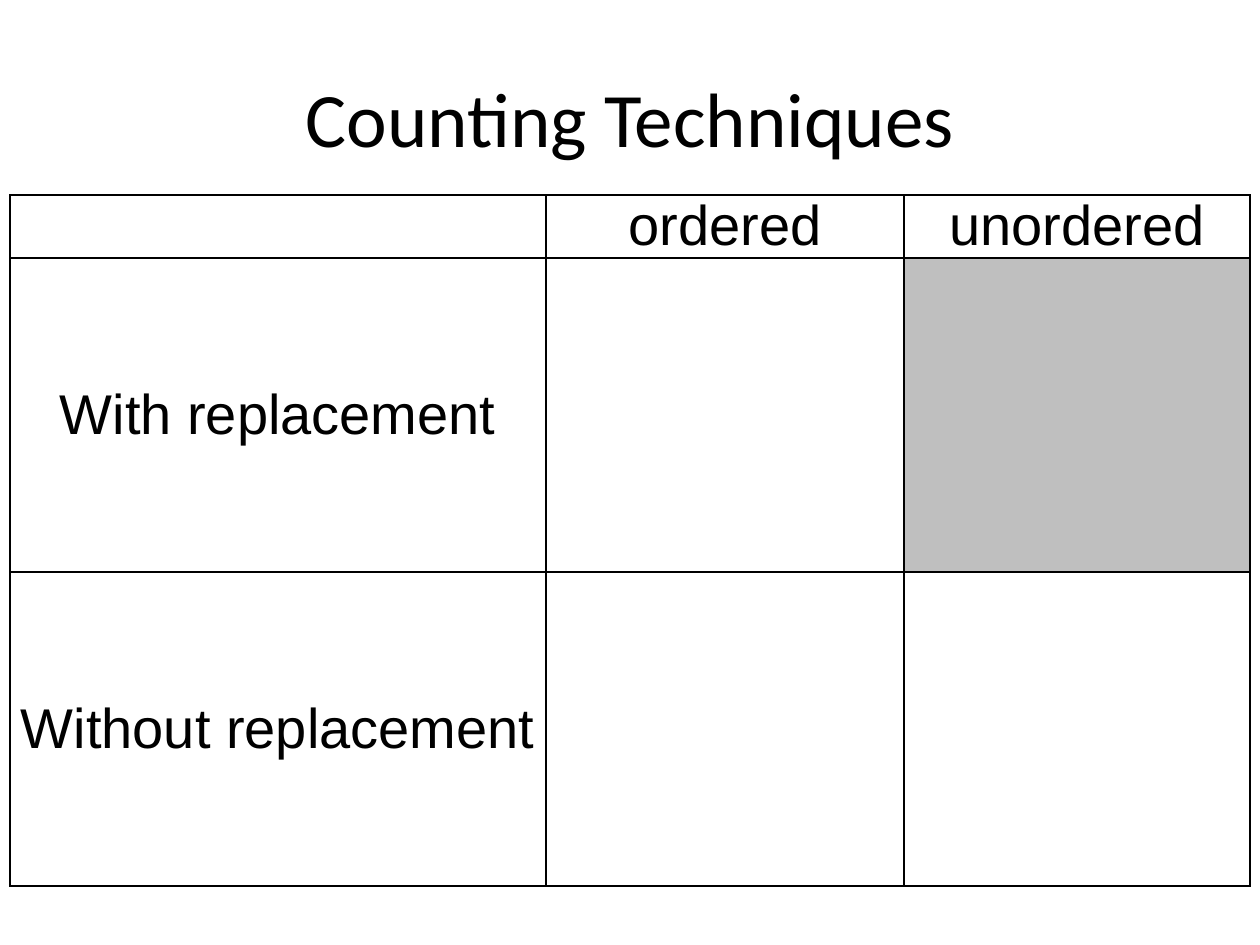
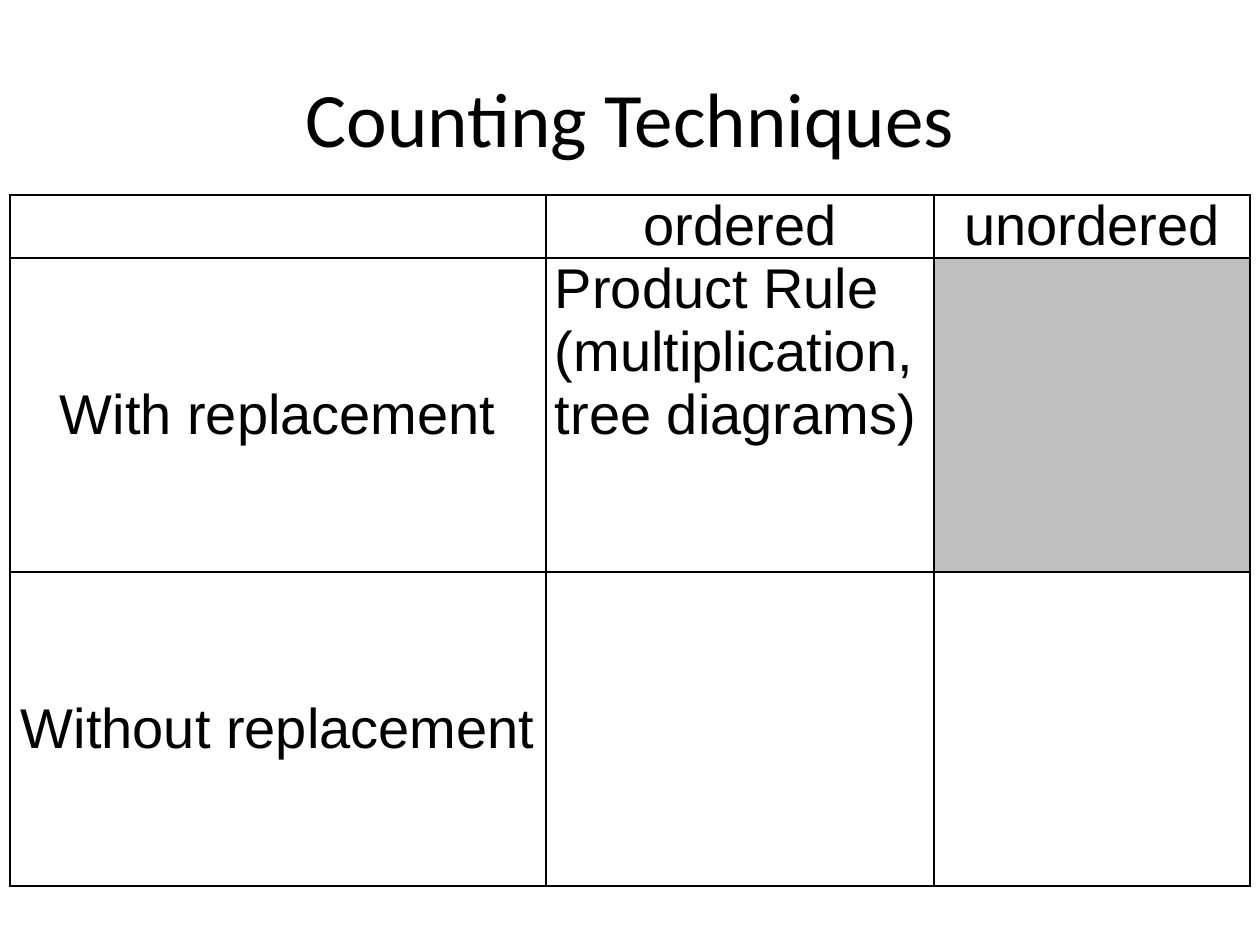
from dataclasses import dataclass

from lxml import etree
from pptx import Presentation
from pptx.dml.color import RGBColor
from pptx.enum.text import MSO_ANCHOR, MSO_AUTO_SIZE, PP_ALIGN
from pptx.oxml.ns import qn
from pptx.util import Pt

CENTER, LEFT = PP_ALIGN.CENTER, PP_ALIGN.LEFT
TOP, MIDDLE = MSO_ANCHOR.TOP, MSO_ANCHOR.MIDDLE
NO_AUTOFIT = MSO_AUTO_SIZE.NONE
TITLE_ONLY = 5
PX_PER_INCH = 126


@dataclass(frozen=True)
class Theme:
    ink: str = "000000"
    shade: str = "BFBFBF"
    title_font: str = "Calibri"
    table_font: str = "Arial"
    title_size: int = 44
    table_size: int = 32
    border: int = 1


theme = Theme()


def px(length):
    return round(length * 914400 / PX_PER_INCH)


def write(frame, lines, font, size, align):
    """Fill a text frame with one formatted paragraph per line."""
    font_format = {"name": font, "size": Pt(size)}
    for index, line in enumerate(lines):
        para = frame.paragraphs[0] if index == 0 else frame.add_paragraph()
        para.alignment = align
        span = para.add_run()
        span.text = line
        for name, value in font_format.items():
            setattr(span.font, name, value)
        span.font.color.rgb = RGBColor.from_string(theme.ink)


# Shared layout and labels
title_place = {"left": px(63), "top": px(38), "width": px(1134), "height": px(158)}
cell_margins = {"margin_left": px(9), "margin_right": px(9),
                "margin_top": 0, "margin_bottom": 0}
row_heights = [62, 314, 314]
labels = {
    (0, 1): ["ordered"],
    (0, 2): ["unordered"],
    (1, 0): ["With replacement"],
    (2, 0): ["Without replacement"],
}
shaded_cell = (1, 2)

# What differs from slide to slide: column widths and filled-in techniques
steps = [
    ([536, 358, 346], {}),
    ([536, 388, 316],
     {(1, 1): ["Product Rule", "(multiplication, tree diagrams)"]}),
]

deck = Presentation()
deck.slide_width, deck.slide_height = px(1260), px(945)

for column_widths, techniques in steps:
    page = deck.slides.add_slide(deck.slide_layouts[TITLE_ONLY])

    # Title
    title = page.shapes.title
    for name, value in title_place.items():
        setattr(title, name, value)
    title.text_frame.auto_size = NO_AUTOFIT
    title.text_frame.vertical_anchor = MIDDLE
    write(title.text_frame, ["Counting Techniques"],
          theme.title_font, theme.title_size, CENTER)

    # Table grid
    table = page.shapes.add_table(
        len(row_heights), len(column_widths), px(10), px(195),
        px(sum(column_widths)), px(sum(row_heights))).table
    table.first_row = table.horz_banding = False
    for column, width in zip(table.columns, column_widths):
        column.width = px(width)
    for row, height in zip(table.rows, row_heights):
        row.height = px(height)

    # Cells: margins, borders, fill and text
    texts = labels | techniques
    for row in range(len(row_heights)):
        for column in range(len(column_widths)):
            place = (row, column)
            cell = table.cell(row, column)
            for name, value in cell_margins.items():
                setattr(cell, name, value)
            cell.vertical_anchor = MIDDLE if column == 0 else TOP

            properties = cell._tc.get_or_add_tcPr()
            for side in ("lnL", "lnR", "lnT", "lnB"):
                line = etree.SubElement(properties, qn(f"a:{side}"),
                                        w=str(Pt(theme.border)))
                fill = etree.SubElement(line, qn("a:solidFill"))
                etree.SubElement(fill, qn("a:srgbClr"), val=theme.ink)

            if place == shaded_cell:
                cell.fill.solid()
                cell.fill.fore_color.rgb = RGBColor.from_string(theme.shade)
            else:
                cell.fill.background()

            if place in texts:
                write(cell.text_frame, texts[place], theme.table_font,
                      theme.table_size, LEFT if place in techniques else CENTER)

deck.save("out.pptx")
